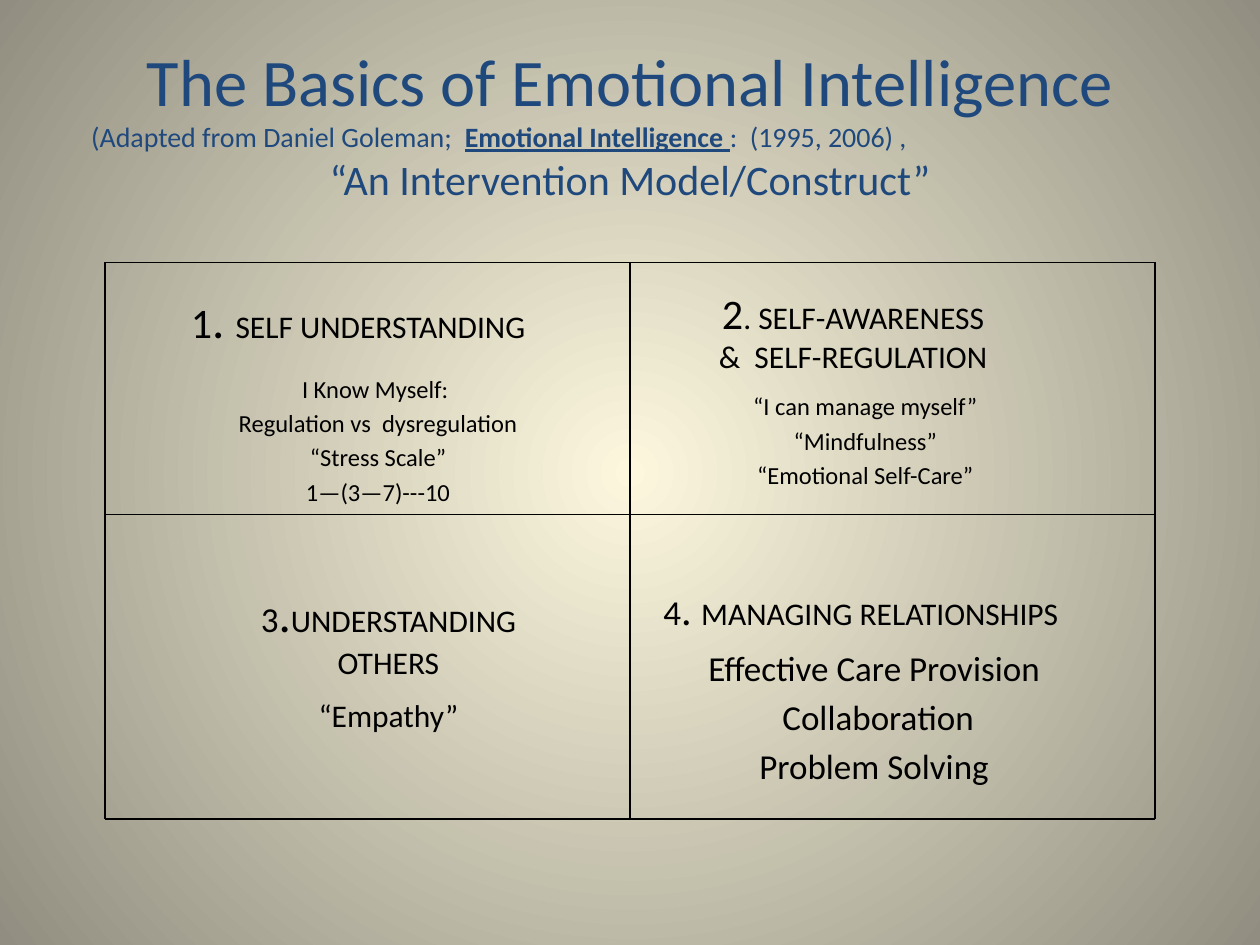
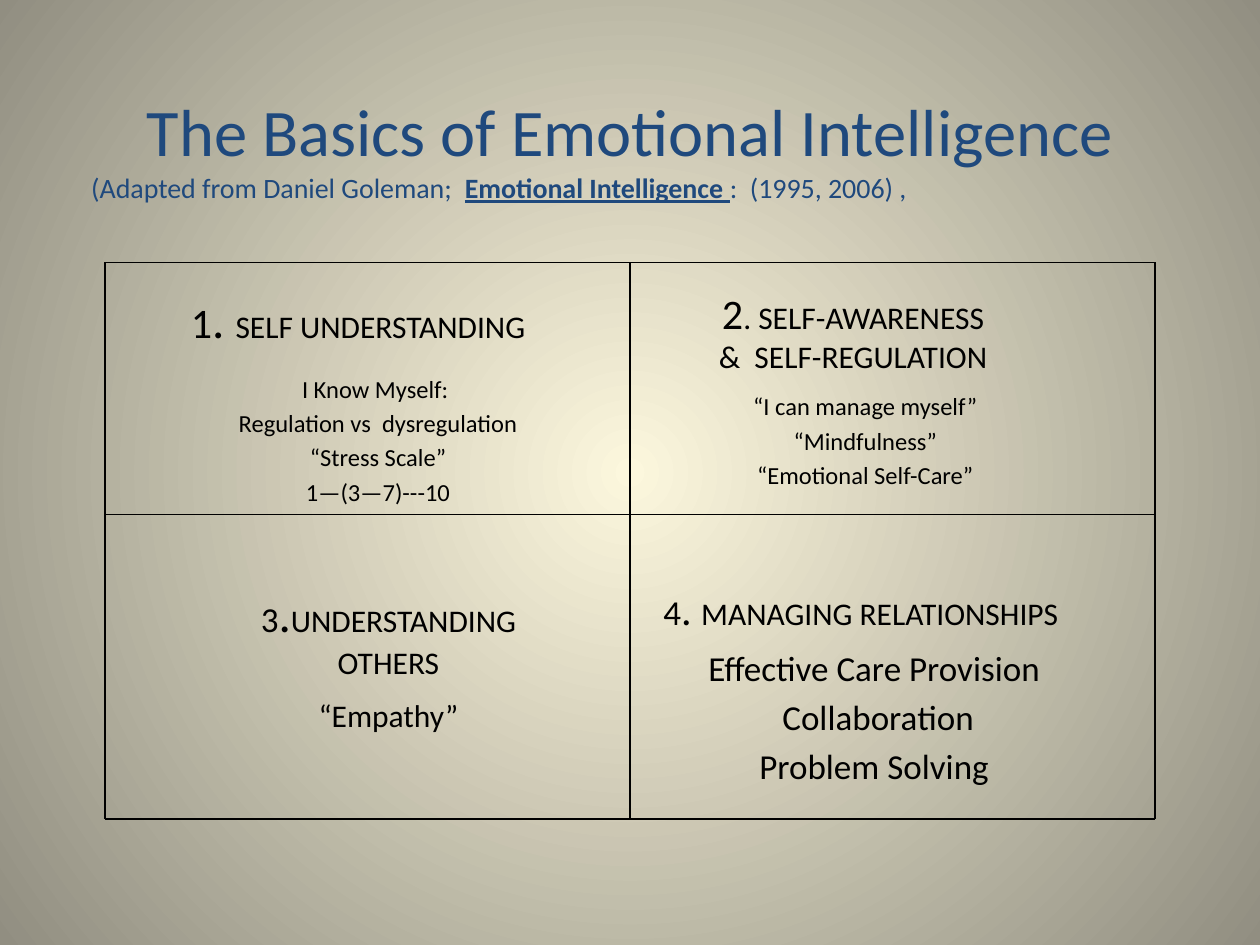
import pptx
import pptx.dml.color
import pptx.enum.shapes
import pptx.enum.text
import pptx.oxml
import pptx.oxml.ns
import pptx.util
from lxml import etree

Pt = pptx.util.Pt
qn = pptx.oxml.ns.qn
LEFT = pptx.enum.text.PP_ALIGN.LEFT
CENTER = pptx.enum.text.PP_ALIGN.CENTER

# Shared style
FONT = "Calibri"
BLUE, BLACK = "1F497D", "000000"
GLOW, EDGE = "FCF7DD", "918E81"

# Grid of quadrants: line positions in points
COLUMNS = (60, 360, 660)
ROWS = (150, 294, 468)

# Title paragraphs: (alignment, [(text, size, emphasised)])
TITLE = [
    (CENTER, [("The Basics of Emotional Intelligence", 38, False)]),
    (LEFT, [("(Adapted from Daniel Goleman;  ", 16, False),
            ("Emotional Intelligence ", 16, True),
            (":  (1995, 2006) ,", 16, False)]),
]
SUBTITLE = (CENTER, [("“An Intervention Model/Construct”", 24, False)])

# Quadrant texts: (left, top, width, height), alignment, wrap, gap, paragraphs
QUADRANTS = [
    ((102, 162, 236, 41), LEFT, False, 0.2,
     [[("1", 24), (". ", 28), ("SELF UNDERSTANDING", 18)]]),
    ((114, 210, 204, 85), CENTER, True, 0.2,
     [[("I Know Myself: ", 14)], [("Regulation vs  dysregulation", 14)],
      [("“Stress Scale”", 14)], [("1—(3—7)---10", 14)]]),
    ((397.5, 160.5, 180, 58), CENTER, True, 0.2,
     [[("2", 24), (". SELF-AWARENESS &  SELF-REGULATION", 18)]]),
    ((422.5, 220, 144, 65), CENTER, False, 0.2,
     [[("“I can manage myself”", 14)], [("“Mindfulness”", 14)],
      [("“Emotional Self-Care”", 14)]]),
    ((126, 330, 192, 96), CENTER, True, 0.5,
     [[("3", 20), (".", 28), ("UNDERSTANDING OTHERS", 18)],
      [("“Empathy”", 18)]]),
    ((372, 330, 283, 36), LEFT, False, 0,
     [[("4", 20), (". ", 24), ("MANAGING RELATIONSHIPS", 18)]]),
    ((396, 366, 207, 90), CENTER, False, 0.2,
     [[("Effective Care Provision", 20)], [(" Collaboration", 20)],
      [("Problem Solving", 20)]]),
]


def rgb(code):
    return pptx.dml.color.RGBColor.from_string(code)


def set_background(master):
    """Radial gradient that glows in the middle."""
    fill = master.background.fill
    fill.gradient()
    for stop, position, color in zip(fill.gradient_stops, (0, 1), (GLOW, EDGE)):
        stop.position = position
        stop.color.rgb = rgb(color)
    lin = next(master.element.iter(qn("a:lin")))
    radial = etree.Element(qn("a:path"), {"path": "circle"})
    etree.SubElement(radial, qn("a:fillToRect"), dict.fromkeys("ltrb", "50000"))
    lin.getparent().replace(lin, radial)


def add_box(s, box, wrap=True):
    tf = s.shapes.add_textbox(*map(Pt, box)).text_frame
    tf.word_wrap = wrap
    return tf


def add_paragraph(tf, is_first, align):
    p = tf.paragraphs[0] if is_first else tf.add_paragraph()
    p.alignment = align
    return p


def add_run(p, text, size, color, emphasised=False):
    r = p.add_run()
    r.text = text
    r.font.name, r.font.size = FONT, Pt(size)
    r.font.color.rgb = rgb(color)
    r.font.bold = r.font.underline = emphasised


def add_title(s, paragraphs):
    tf = add_box(s, (45, 24, 630, 96))
    tf.vertical_anchor = pptx.enum.text.MSO_ANCHOR.BOTTOM
    for i, (align, runs) in enumerate(paragraphs):
        p = add_paragraph(tf, i == 0, align)
        for text, size, emphasised in runs:
            add_run(p, text, size, BLUE, emphasised)


def add_quadrant_text(s, box, align, wrap, gap, paragraphs):
    """Gap is the space between paragraphs as a share of the text size."""
    tf = add_box(s, box, wrap)
    tf.auto_size = pptx.enum.text.MSO_AUTO_SIZE.SHAPE_TO_FIT_TEXT
    for i, runs in enumerate(paragraphs):
        p = add_paragraph(tf, i == 0, align)
        if i:
            p.space_before = Pt(gap * runs[0][1])
        for text, size in runs:
            add_run(p, text, size, BLACK)


def add_line(s, x1, y1, x2, y2):
    line = s.shapes.add_connector(
        pptx.enum.shapes.MSO_CONNECTOR.STRAIGHT, *map(Pt, (x1, y1, x2, y2)))
    line.line.color.rgb = rgb(BLACK)
    line.line.width = Pt(0.75)
    etree.SubElement(line.element.spPr, qn("a:effectLst"))


def add_grid(s):
    for x in COLUMNS:
        add_line(s, x, ROWS[0], x, ROWS[-1])
    for y in ROWS:
        add_line(s, COLUMNS[0], y, COLUMNS[-1], y)


def main():
    prs = pptx.Presentation()
    prs.slide_width, prs.slide_height = Pt(720), Pt(540)
    set_background(prs.slide_master)

    # The same model, with and without the subtitle
    for title in (TITLE + [SUBTITLE], TITLE):
        s = prs.slides.add_slide(prs.slide_layouts[6])
        add_title(s, title)
        for quadrant in QUADRANTS:
            add_quadrant_text(s, *quadrant)
        add_grid(s)

    prs.save("out.pptx")


if __name__ == "__main__":
    main()
